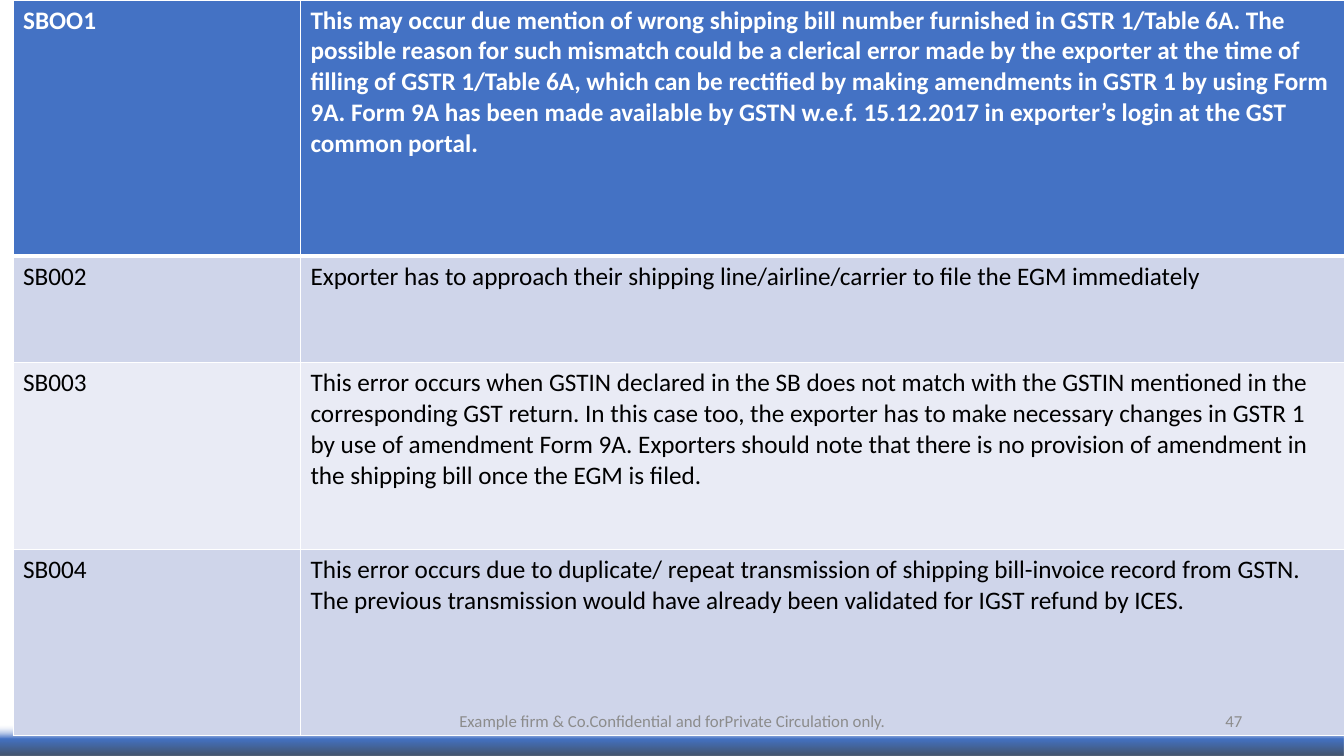
from dataclasses import dataclass

from lxml import etree
from pptx import Presentation
from pptx.dml.color import RGBColor
from pptx.enum.shapes import MSO_SHAPE
from pptx.enum.text import MSO_ANCHOR, PP_ALIGN
from pptx.oxml import parse_xml
from pptx.oxml.ns import qn
from pptx.util import Inches, Pt

RECTANGLE = MSO_SHAPE.RECTANGLE
MIDDLE = MSO_ANCHOR.MIDDLE
CENTER, RIGHT = PP_ALIGN.CENTER, PP_ALIGN.RIGHT
DRAWING_NS = "http://schemas.openxmlformats.org/drawingml/2006/main"

SLIDE_W, SLIDE_H = 13.33, 7.5
TABLE_LEFT = 0.13
COLUMNS = (2.85, 10.36)
ROWS = (2.54, 1.06, 1.85, 1.85)
FOOTER_TOP, FOOTER_H = 6.95, 0.4
STRIP_H = 0.34


@dataclass(frozen=True)
class Theme:
    font: str = "Calibri"
    body_size: int = 18
    footer_size: int = 12
    header_fill: str = "4472C4"
    band_fills: tuple = ("CFD5EA", "E9EBF5")
    header_text: str = "FFFFFF"
    body_text: str = "000000"
    footer_text: str = "8C8C8C"
    rule: str = "FFFFFF"
    # position in percent, colour, opacity in percent; top to bottom
    strip_stops: tuple = ((11, "E0E5F7", 0), (50, "4472C4", 100),
                          (100, "44546A", 100))


THEME = Theme()

ERROR_CODES = (
    ("SBOO1",
     "This may occur due mention of wrong shipping bill number furnished in "
     "GSTR 1/Table 6A. The possible reason for such mismatch could be a "
     "clerical error made by the exporter at the time of filling of GSTR "
     "1/Table 6A, which can be rectified by making amendments in GSTR 1 by "
     "using Form 9A. Form 9A has been made available by GSTN w.e.f. "
     "15.12.2017 in exporter’s login at the GST common portal."),
    ("SB002",
     "Exporter has to approach their shipping line/airline/carrier to file "
     "the EGM immediately"),
    ("SB003",
     "This error occurs when GSTIN declared in the SB does not match with the "
     "GSTIN mentioned in the corresponding GST return. In this case too, the "
     "exporter has to make necessary changes in GSTR 1 by use of amendment "
     "Form 9A. Exporters should note that there is no provision of amendment "
     "in the shipping bill once the EGM is filed."),
    ("SB004",
     "This error occurs due to duplicate/ repeat transmission of shipping "
     "bill-invoice record from GSTN. The previous transmission would have "
     "already been validated for IGST refund by ICES."),
)


def write_text(frame, text, size, color, bold=False, align=None):
    paragraph = frame.paragraphs[0]
    paragraph.alignment = align
    run = paragraph.add_run()
    run.text = text
    font_format = {"name": THEME.font, "size": Pt(size), "bold": bold}
    for attribute, value in font_format.items():
        setattr(run.font, attribute, value)
    run.font.color.rgb = RGBColor.from_string(color)


def add_strip(slide):
    strip = slide.shapes.add_shape(
        RECTANGLE, 0, Inches(SLIDE_H - STRIP_H), Inches(SLIDE_W), Inches(STRIP_H))
    strip.shadow.inherit = False
    strip.line.fill.background()
    stops = "".join(
        f'<a:gs pos="{position * 1000}"><a:srgbClr val="{color}">'
        f'<a:alpha val="{opacity * 1000}"/></a:srgbClr></a:gs>'
        for position, color, opacity in THEME.strip_stops)
    gradient = parse_xml(
        f'<a:gradFill xmlns:a="{DRAWING_NS}" rotWithShape="1">'
        f'<a:gsLst>{stops}</a:gsLst><a:lin ang="5400000" scaled="0"/></a:gradFill>')
    strip._element.spPr.find(qn("a:prstGeom")).addnext(gradient)


def rule_cell(cell, is_header):
    """White rules round a cell, heavier under the header row."""
    properties = cell._tc.get_or_add_tcPr()
    for side in ("lnL", "lnR", "lnT", "lnB"):
        width = 3 if is_header and side == "lnB" else 1
        rule = etree.SubElement(properties, qn(f"a:{side}"), w=str(Pt(width)))
        fill = etree.SubElement(rule, qn("a:solidFill"))
        etree.SubElement(fill, qn("a:srgbClr"), val=THEME.rule)


def add_error_table(slide):
    table = slide.shapes.add_table(
        len(ROWS), len(COLUMNS), Inches(TABLE_LEFT), 0,
        Inches(sum(COLUMNS)), Inches(sum(ROWS))).table
    for column, width in zip(table.columns, COLUMNS):
        column.width = Inches(width)
    for index, (row, height) in enumerate(zip(table.rows, ROWS)):
        row.height = Inches(height)
        is_header = index == 0
        fill = THEME.header_fill if is_header else THEME.band_fills[(index - 1) % 2]
        color = THEME.header_text if is_header else THEME.body_text
        for cell, text in zip(row.cells, ERROR_CODES[index]):
            rule_cell(cell, is_header)
            cell.fill.solid()
            cell.fill.fore_color.rgb = RGBColor.from_string(fill)
            write_text(cell.text_frame, text, THEME.body_size, color, is_header)


def add_footer(slide, left, width, text, align):
    footer = slide.shapes.add_textbox(
        Inches(left), Inches(FOOTER_TOP), Inches(width), Inches(FOOTER_H))
    frame = footer.text_frame
    for attribute, value in {"word_wrap": True, "vertical_anchor": MIDDLE}.items():
        setattr(frame, attribute, value)
    write_text(frame, text, THEME.footer_size, THEME.footer_text, align=align)


def main():
    deck = Presentation()
    deck.slide_width, deck.slide_height = Inches(SLIDE_W), Inches(SLIDE_H)
    slide = deck.slides.add_slide(deck.slide_layouts[6])

    # Bottom strip, then the table over it
    add_strip(slide)
    add_error_table(slide)

    # Footer notice and page number
    add_footer(slide, 4.42, 4.5,
               "Example firm & Co.Confidential and forPrivate Circulation only.",
               CENTER)
    add_footer(slide, 9.42, 3, "47", RIGHT)

    deck.save("out.pptx")


if __name__ == "__main__":
    main()
